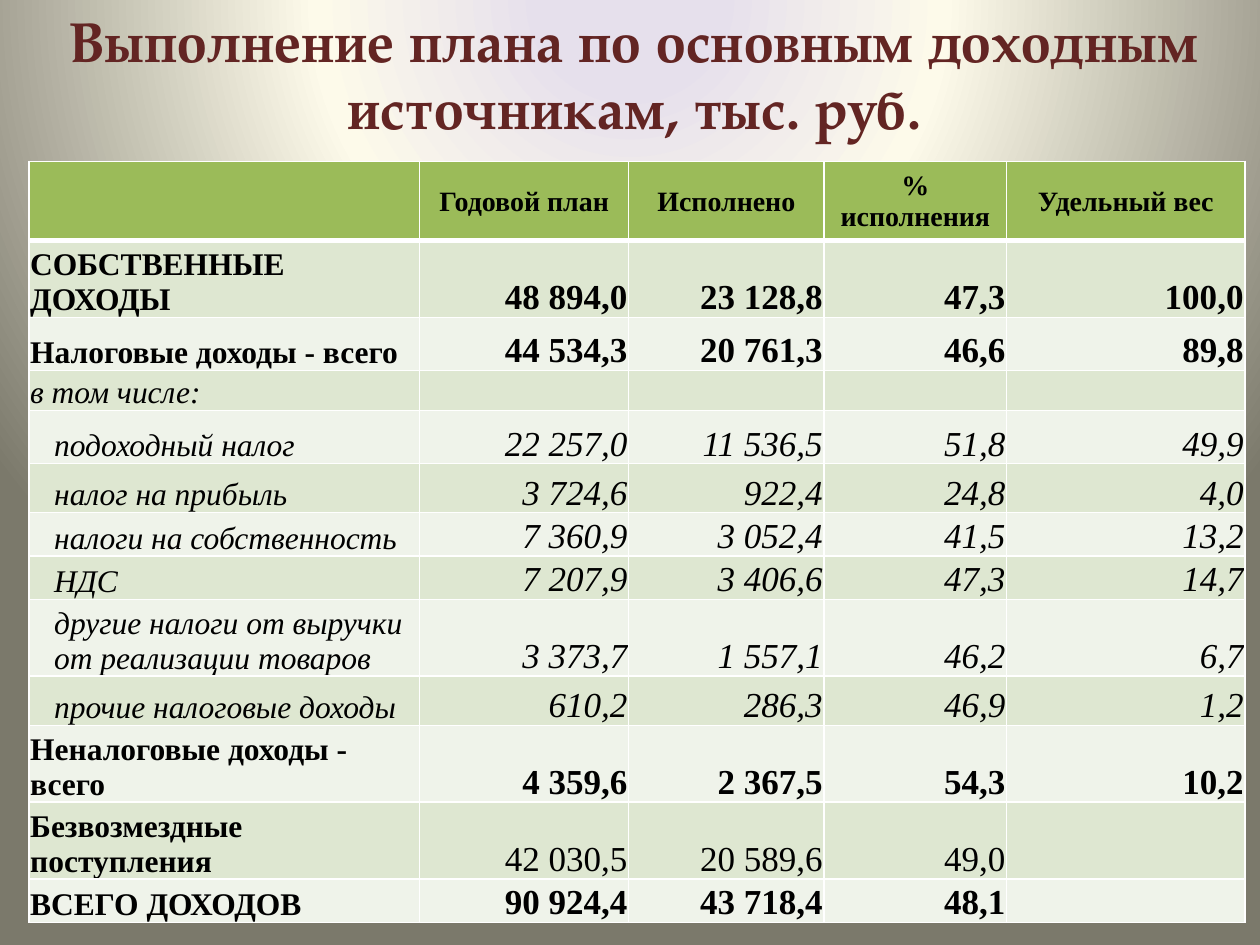
import pptx
import pptx.dml.color
import pptx.enum.text
import pptx.oxml
import pptx.oxml.ns
import pptx.util
from pptx.util import Inches

COLORS = {
    "title": "632523", "text": "000000", "border": "FFFFFF",
    "header": "9BBB59", "dark_band": "DEE7D1", "light_band": "EFF3EA",
    "glow": "E6E0EC", "cream": "FDFAEA", "edge": "7B796B",
}
ALIGN = pptx.enum.text.PP_ALIGN
ANCHOR = pptx.enum.text.MSO_ANCHOR
NAMESPACE = pptx.oxml.ns.nsdecls("a", "p")


def write(frame, text, size, font="Times New Roman", color="text",
          bold=False, italic=False, align=ALIGN.LEFT, spacing=0):
    para = frame.paragraphs[0]
    para.alignment = align
    para.font.size = pptx.util.Pt(size)
    if not text:
        # An empty cell still needs a small line height
        para._p.get_or_add_endParaRPr().set("sz", str(size * 100))
        return
    span = para.add_run()
    span.text = text
    span.font.size = pptx.util.Pt(size)
    span.font.name = font
    span.font.bold = bold
    span.font.italic = italic
    span.font.color.rgb = pptx.dml.color.RGBColor.from_string(COLORS[color])
    if spacing:
        span._r.get_or_add_rPr().set("spc", str(int(spacing * 100)))


def paint_cell(cell, color, bottom_width):
    properties = cell._tc.get_or_add_tcPr()
    for side, width in (("L", 1), ("R", 1), ("T", 1), ("B", bottom_width)):
        properties.append(pptx.oxml.parse_xml(
            f'<a:ln{side} {NAMESPACE} w="{pptx.util.Pt(width)}"><a:solidFill>'
            f'<a:srgbClr val="{COLORS["border"]}"/></a:solidFill></a:ln{side}>'))
    cell.fill.solid()
    cell.fill.fore_color.rgb = pptx.dml.color.RGBColor.from_string(COLORS[color])


deck = pptx.Presentation()
deck.slide_width = Inches(10)
deck.slide_height = Inches(7.5)
page = deck.slides.add_slide(deck.slide_layouts[6])

# Background: circular gradient centred above the slide
stops = "".join(
    f'<a:gs pos="{percent * 1000}"><a:srgbClr val="{COLORS[name]}"/></a:gs>'
    for percent, name in ((11, "glow"), (40, "cream"), (100, "edge")))
page._element.cSld.insert(0, pptx.oxml.parse_xml(
    f'<p:bg {NAMESPACE}><p:bgPr><a:gradFill rotWithShape="1"><a:gsLst>{stops}</a:gsLst>'
    '<a:path path="circle"><a:fillToRect l="50000" t="-80000" r="50000" b="180000"/>'
    '</a:path></a:gradFill><a:effectLst/></p:bgPr></p:bg>'))

# Title
box = page.shapes.add_textbox(Inches(0.23), Inches(0), Inches(9.61), Inches(1.17))
box.text_frame.word_wrap = True
box.text_frame.vertical_anchor = ANCHOR.MIDDLE
write(box.text_frame, "Выполнение плана по основным доходным источникам, тыс. руб.",
      32, font="TeX Gyre Pagella", color="title", bold=True,
      align=ALIGN.CENTER, spacing=0.5)

# Table rows: height, label style, value style, texts
rows = [
    (0.63, "bold", "bold", ["", "Годовой план", "Исполнено", "% исполнения", "Удельный вес"]),
    (0.55, "bold", "bold", ["СОБСТВЕННЫЕ ДОХОДЫ", "48 894,0", "23 128,8", "47,3", "100,0"]),
    (0.42, "bold", "bold", ["Налоговые доходы - всего", "44 534,3", "20 761,3", "46,6", "89,8"]),
    (0.32, "italic", "italic", ["в том числе:", "", "", "", ""]),
    (0.42, "item", "italic", ["подоходный налог", "22 257,0", "11 536,5", "51,8", "49,9"]),
    (0.39, "item", "italic", ["налог на прибыль", "3 724,6", "922,4", "24,8", "4,0"]),
    (0.32, "item", "italic", ["налоги на собственность", "7 360,9", "3 052,4", "41,5", "13,2"]),
    (0.32, "item", "italic", ["НДС", "7 207,9", "3 406,6", "47,3", "14,7"]),
    (0.56, "item", "italic", ["другие налоги от выручки от реализации товаров",
                              "3 373,7", "1 557,1", "46,2", "6,7"]),
    (0.39, "item", "italic", ["прочие налоговые доходы", "610,2", "286,3", "46,9", "1,2"]),
    (0.56, "bold", "bold", ["Неналоговые доходы - всего", "4 359,6", "2 367,5", "54,3", "10,2"]),
    (0.56, "bold", "plain", ["Безвозмездные поступления", "42 030,5", "20 589,6", "49,0", ""]),
    (0.32, "bold", "bold", ["ВСЕГО ДОХОДОВ", "90 924,4", "43 718,4", "48,1", ""]),
]
column_widths = [3.1, 1.66, 1.55, 1.45, 1.89]

# Table grid
table = page.shapes.add_table(
    len(rows), len(column_widths), Inches(0.23), Inches(1.28),
    Inches(sum(column_widths)), Inches(sum(row[0] for row in rows))).table
table.first_row = False
table.horz_banding = False
for column, width in zip(table.columns, column_widths):
    column.width = Inches(width)

# Table cells
for row_index, (height, label_style, value_style, texts) in enumerate(rows):
    table.rows[row_index].height = Inches(height)
    is_header = row_index == 0
    band = "header" if is_header else "dark_band" if row_index % 2 else "light_band"
    for column_index, text in enumerate(texts):
        cell = table.cell(row_index, column_index)
        is_label = column_index == 0
        style = label_style if is_label else value_style
        paint_cell(cell, band, 3 if is_header else 1)
        cell.margin_left = Inches(0.2 if style == "item" else 0.01)
        cell.margin_right = cell.margin_top = Inches(0.01)
        cell.margin_bottom = 0
        cell.vertical_anchor = ANCHOR.MIDDLE if is_header else ANCHOR.BOTTOM
        if is_header:
            size, align = 16, ALIGN.CENTER
        elif is_label:
            size, align = 18, ALIGN.LEFT
        else:
            size, align = (20 if text else 16), ALIGN.RIGHT
        write(cell.text_frame, text, size, align=align,
              bold=style == "bold", italic=style in ("italic", "item"))

deck.save("out.pptx")
